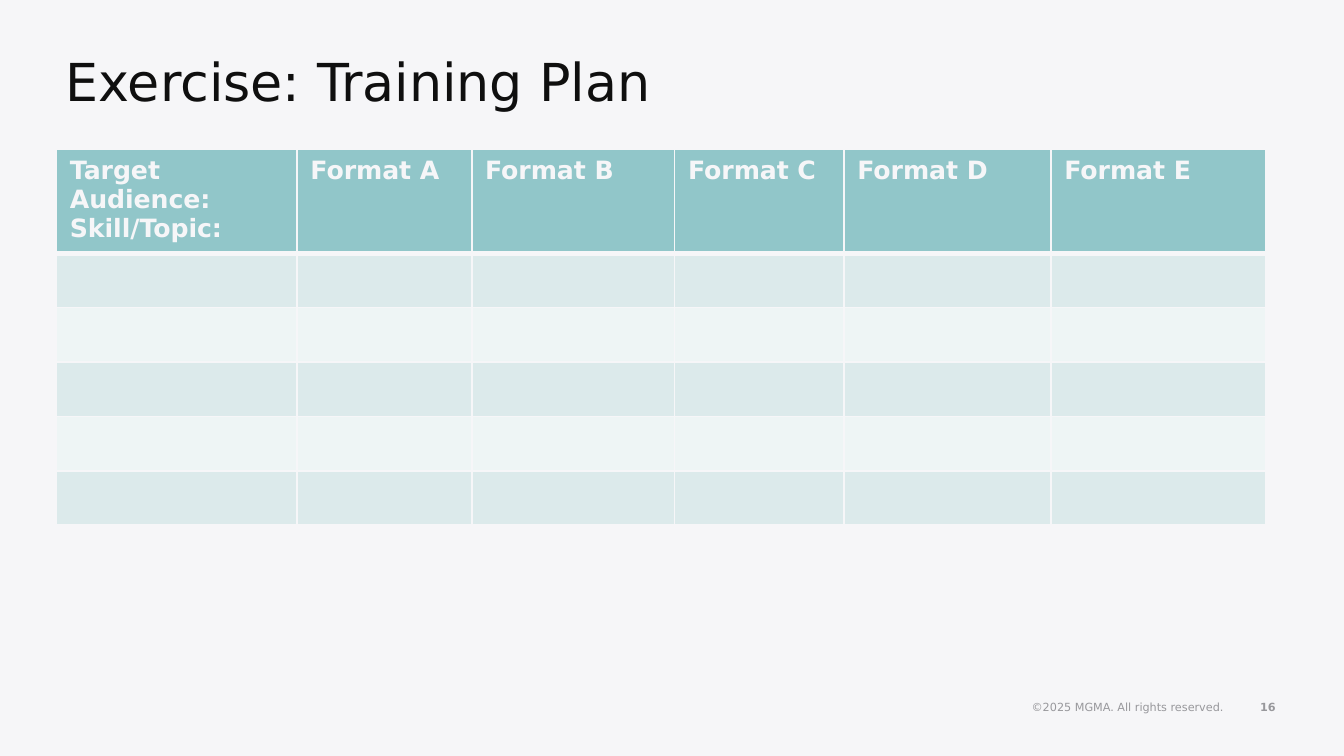
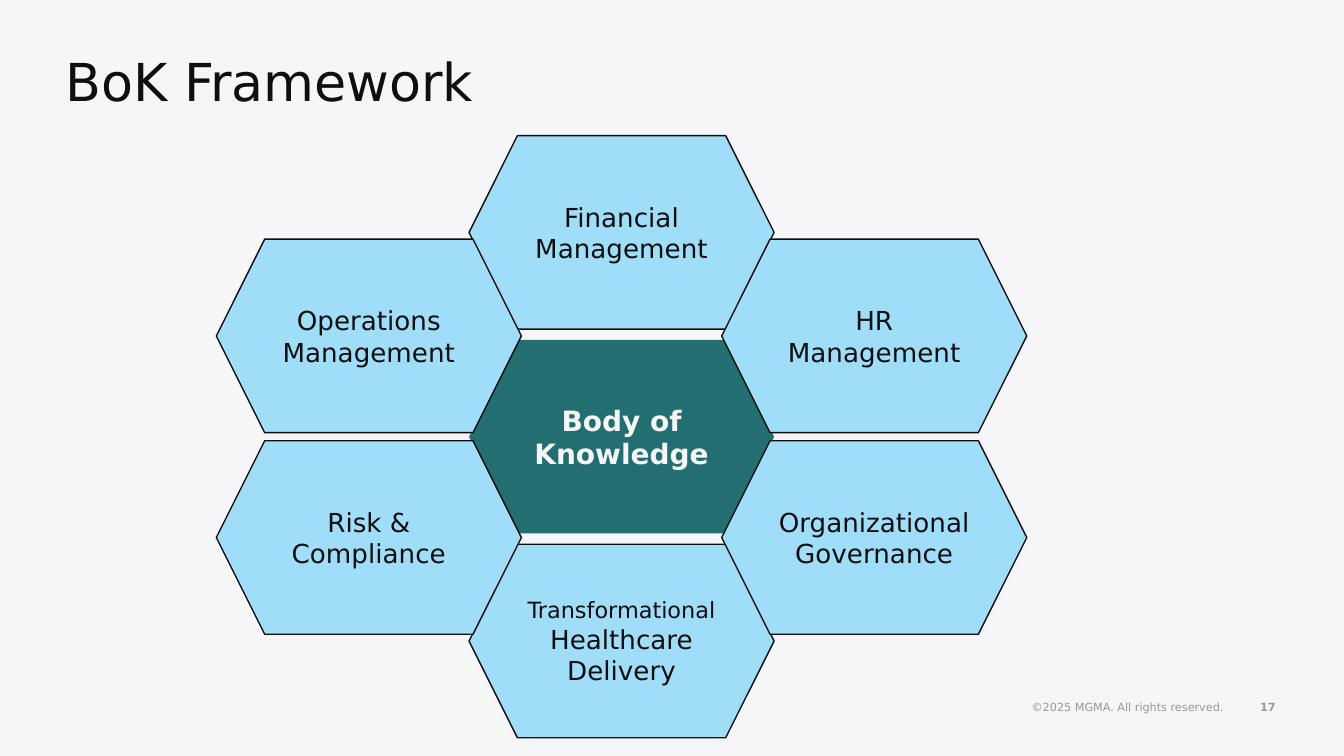
from lxml import etree
from pptx import Presentation
from pptx.dml.color import RGBColor
from pptx.enum.shapes import MSO_SHAPE
from pptx.enum.text import MSO_ANCHOR, PP_ALIGN
from pptx.oxml.ns import qn
from pptx.util import Inches, Pt

HEXAGON = MSO_SHAPE.HEXAGON
TOP, MIDDLE = MSO_ANCHOR.TOP, MSO_ANCHOR.MIDDLE
LEFT, CENTER, RIGHT = PP_ALIGN.LEFT, PP_ALIGN.CENTER, PP_ALIGN.RIGHT

FONT = "DejaVu Sans"
PAPER = RGBColor(0xF6, 0xF6, 0xF8)
INK = RGBColor(0x0F, 0x0F, 0x0F)
GRAY = RGBColor(0x98, 0x98, 0x9C)
HEADER_TEAL = RGBColor(0x91, 0xC6, 0xC9)
BAND_DARK = RGBColor(0xDC, 0xEA, 0xEB)
BAND_LIGHT = RGBColor(0xEE, 0xF5, 0xF5)
CORE_TEAL = RGBColor(0x23, 0x6E, 0x70)
SKY = RGBColor(0xA0, 0xDD, 0xF9)

COPYRIGHT = "©2025 MGMA. All rights reserved."
PLAN_HEADERS = ["Target Audience:\nSkill/Topic:"] + [f"Format {letter}" for letter in "ABCDE"]
PLAN_WIDTHS = [1.79, 1.3, 1.51, 1.26, 1.54, 1.6]
PLAN_ROWS = 6
PLAN_HEIGHT = 2.8
ROW_HEIGHT = 2.43 / PLAN_ROWS

HEX_WIDTH, HEX_HEIGHT = 2.27, 1.44
SIDE_X, SIDE_Y, POLE_Y = 1.88, 0.75, 1.52
DOMAINS = [
    (0, -POLE_Y, [("Financial Management", 14)]),
    (0, POLE_Y, [("Transformational ", 12), ("Healthcare Delivery", 14)]),
    (SIDE_X, SIDE_Y, [("Organizational Governance", 14)]),
    (SIDE_X, -SIDE_Y, [("HR Management", 14)]),
    (-SIDE_X, SIDE_Y, [("Risk & Compliance", 14)]),
    (-SIDE_X, -SIDE_Y, [("Operations Management", 14)]),
]


def style_font(font, color, size=None, bold=False):
    font.name = FONT
    font.color.rgb = color
    font.bold = bold
    if size:
        font.size = Pt(size)


def add_text(slide, box, text, size, color, align=LEFT, anchor=MIDDLE, bold=False):
    frame = slide.shapes.add_textbox(*map(Inches, box)).text_frame
    frame.word_wrap = True
    frame.vertical_anchor = anchor
    paragraph = frame.paragraphs[0]
    paragraph.text = text
    paragraph.alignment = align
    style_font(paragraph.font, color, size, bold)
    return paragraph


def add_base_slide(presentation, title, number):
    slide = presentation.slides.add_slide(presentation.slide_layouts[6])
    slide.background.fill.solid()
    slide.background.fill.fore_color.rgb = PAPER
    add_text(slide, (6.41, 5.11, 2.79, 0.3), COPYRIGHT, 6, GRAY, RIGHT)
    add_text(slide, (8.99, 5.11, 0.6, 0.3), str(number), 6, GRAY, RIGHT, bold=True)
    heading = add_text(slide, (0.39, 0.37, 6.73, 0.57), title, 28, INK, anchor=TOP)
    heading.line_spacing = 0.9
    return slide


def style_cell(cell, color, top, bottom):
    properties = cell._tc.get_or_add_tcPr()
    for side, width in (("L", 1), ("R", 1), ("T", top), ("B", bottom)):
        line = etree.SubElement(properties, qn(f"a:ln{side}"), w=str(Pt(width)))
        fill = etree.SubElement(line, qn("a:solidFill"))
        etree.SubElement(fill, qn("a:srgbClr"), val=str(PAPER))
    cell.fill.solid()
    cell.fill.fore_color.rgb = color


def add_plan_table(slide, left, top):
    box = (left, top, sum(PLAN_WIDTHS), PLAN_HEIGHT)
    graphic_frame = slide.shapes.add_table(PLAN_ROWS, len(PLAN_WIDTHS), *map(Inches, box))
    table = graphic_frame.table
    for column, width in zip(table.columns, PLAN_WIDTHS):
        column.width = Inches(width)
    for index, row in enumerate(table.rows):
        row.height = Inches(ROW_HEIGHT)
        color = HEADER_TEAL if index == 0 else BAND_DARK if index % 2 else BAND_LIGHT
        for cell in row.cells:
            style_cell(cell, color, 3 if index == 1 else 1, 3 if index == 0 else 1)
    graphic_frame.height = Inches(PLAN_HEIGHT)
    for cell, text in zip(table.rows[0].cells, PLAN_HEADERS):
        cell.text = text
        for paragraph in cell.text_frame.paragraphs:
            style_font(paragraph.font, PAPER, 13.5, True)


def add_hexagon(slide, left, top, runs, fill, color, outline=None, bold=False):
    box = (left, top, HEX_WIDTH, HEX_HEIGHT)
    shape = slide.shapes.add_shape(HEXAGON, *map(Inches, box))
    shape.shadow.inherit = False
    shape.fill.solid()
    shape.fill.fore_color.rgb = fill
    if outline:
        shape.line.color.rgb = outline
        shape.line.width = Pt(0.75)
    else:
        shape.line.fill.background()
    frame = shape.text_frame
    frame.word_wrap = True
    frame.vertical_anchor = MIDDLE
    frame.margin_left = frame.margin_right = Inches(0.1)
    frame.margin_top = frame.margin_bottom = Inches(0.1)
    paragraph = frame.paragraphs[0]
    paragraph.alignment = CENTER
    style_font(paragraph.font, color, bold=bold)
    for text, size in runs:
        run = paragraph.add_run()
        run.text = text
        run.font.size = Pt(size)


def add_framework(slide, left, top):
    add_hexagon(slide, left, top, [("Body of Knowledge", 15)], CORE_TEAL, PAPER, bold=True)
    for across, down, runs in DOMAINS:
        add_hexagon(slide, left + across, top + down, runs, SKY, INK, outline=INK)


def main():
    presentation = Presentation()
    presentation.slide_width = Inches(10)
    presentation.slide_height = Inches(10 * 9 / 16)
    add_plan_table(add_base_slide(presentation, "Exercise: Training Plan", 16), 0.42, 1.11)
    add_framework(add_base_slide(presentation, "BoK Framework", 17), 3.49, 2.53)
    presentation.save("out.pptx")


if __name__ == "__main__":
    main()
